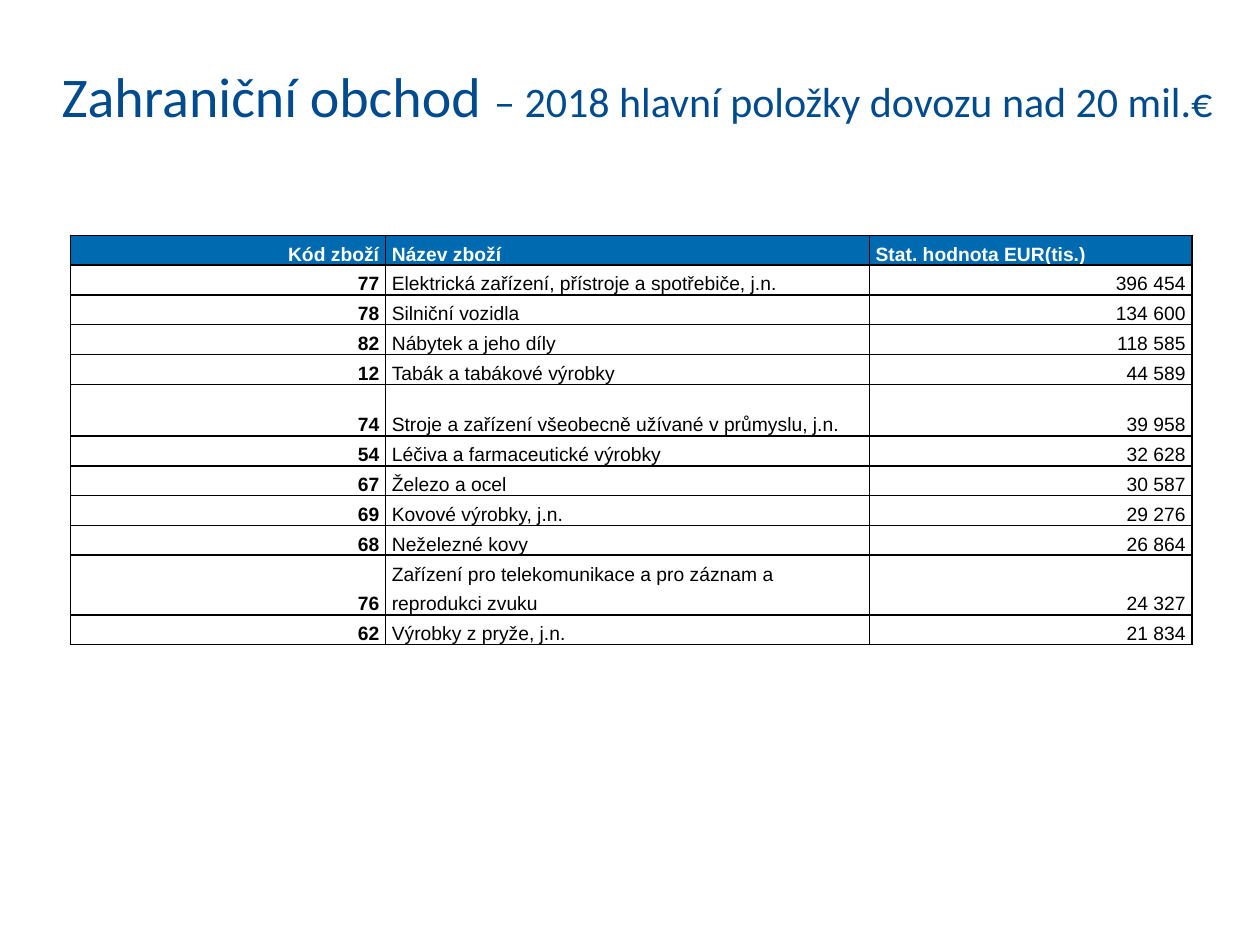
from lxml import etree
from pptx import Presentation
from pptx import util as u
from pptx.dml.color import RGBColor
from pptx.enum import text
from pptx.oxml.ns import qn

COLORS = {"title": "004B8D", "header": "006AB1", "paper": "FFFFFF", "ink": "000000"}
WIDTH, HEIGHT = u.Inches(10), u.Inches(7.5)
COLUMN_SHARES = (0.25, 0.384, 0.256)
ROW_HEIGHT = u.Inches(0.21)
TALL_CODE = "74"
HEADINGS = ("Kód zboží", "Název zboží", "Stat. hodnota EUR(tis.)")
IMPORTS = (
    ("77", "Elektrická zařízení, přístroje a spotřebiče, j.n.", "396 454"),
    ("78", "Silniční vozidla", "134 600"),
    ("82", "Nábytek a jeho díly", "118 585"),
    ("12", "Tabák a tabákové výrobky", "44 589"),
    ("74", "Stroje a zařízení všeobecně užívané v průmyslu, j.n.", "39 958"),
    ("54", "Léčiva a farmaceutické výrobky", "32 628"),
    ("67", "Železo a ocel", "30 587"),
    ("69", "Kovové výrobky, j.n.", "29 276"),
    ("68", "Neželezné kovy", "26 864"),
    ("76", "Zařízení pro telekomunikace a pro záznam a reprodukci zvuku", "24 327"),
    ("62", "Výrobky z pryže, j.n.", "21 834"),
)


def style_font(font, name, size, color, bold=False):
    """Set the typeface, size, colour and weight of a font."""
    font.name, font.size, font.bold = name, u.Pt(size), bold
    font.color.rgb = RGBColor.from_string(COLORS[color])


def add_title(page):
    """Add the heading with its smaller subtitle on one line."""
    box = page.shapes.add_textbox(
        int(WIDTH * 0.049), int(HEIGHT * 0.065), int(WIDTH * 0.934), int(HEIGHT * 0.072))
    frame = box.text_frame
    frame.word_wrap = True
    frame.margin_left = frame.margin_right = frame.margin_top = frame.margin_bottom = 0
    for wording, size in (("Zahraniční obchod ", 32),
                          ("– 2018 hlavní položky dovozu nad 20 mil.€", 24)):
        span = frame.paragraphs[0].add_run()
        span.text = wording
        style_font(span.font, "Calibri", size, "title")


def add_borders(cell):
    """Draw a thin solid line on each side of a cell."""
    properties = cell._tc.get_or_add_tcPr()
    for side in ("a:lnL", "a:lnR", "a:lnT", "a:lnB"):
        line = etree.SubElement(properties, qn(side), w=str(u.Pt(1)))
        fill = etree.SubElement(line, qn("a:solidFill"))
        etree.SubElement(fill, qn("a:srgbClr"), val=COLORS["ink"])


def fill_cell(cell, wording, right, bold, color, background):
    """Write and format one table cell."""
    add_borders(cell)
    cell.fill.solid()
    cell.fill.fore_color.rgb = RGBColor.from_string(COLORS[background])
    cell.vertical_anchor = text.MSO_ANCHOR.BOTTOM
    cell.margin_left = cell.margin_right = u.Inches(0.05)
    cell.margin_top = cell.margin_bottom = 0
    cell.text_frame.text = wording
    para = cell.text_frame.paragraphs[0]
    para.alignment = text.PP_ALIGN.RIGHT if right else text.PP_ALIGN.LEFT
    para.line_spacing = u.Pt(17)
    style_font(para.runs[0].font, "Arial", 11, color, bold)


def add_import_table(page):
    """Add the table of imported goods with a coloured header row."""
    records = (HEADINGS,) + IMPORTS
    table = page.shapes.add_table(
        len(records), len(HEADINGS), int(WIDTH * 0.056), int(HEIGHT * 0.249),
        int(WIDTH * sum(COLUMN_SHARES)), ROW_HEIGHT * len(records)).table
    table.horz_banding = False
    for column, share in zip(table.columns, COLUMN_SHARES):
        column.width = int(WIDTH * share)
    for row_index, record in enumerate(records):
        header = row_index == 0
        table.rows[row_index].height = u.Inches(0.41) if record[0] == TALL_CODE else ROW_HEIGHT
        for column_index, wording in enumerate(record):
            right = column_index == 0 or (column_index == 2 and not header)
            fill_cell(table.cell(row_index, column_index), wording, right,
                      header or column_index == 0,
                      "paper" if header else "ink", "header" if header else "paper")


def main():
    """Build and save the slide."""
    deck = Presentation()
    deck.slide_width, deck.slide_height = WIDTH, HEIGHT
    page = deck.slides.add_slide(deck.slide_layouts[6])
    add_title(page)
    add_import_table(page)
    deck.save("out.pptx")


if __name__ == "__main__":
    main()
